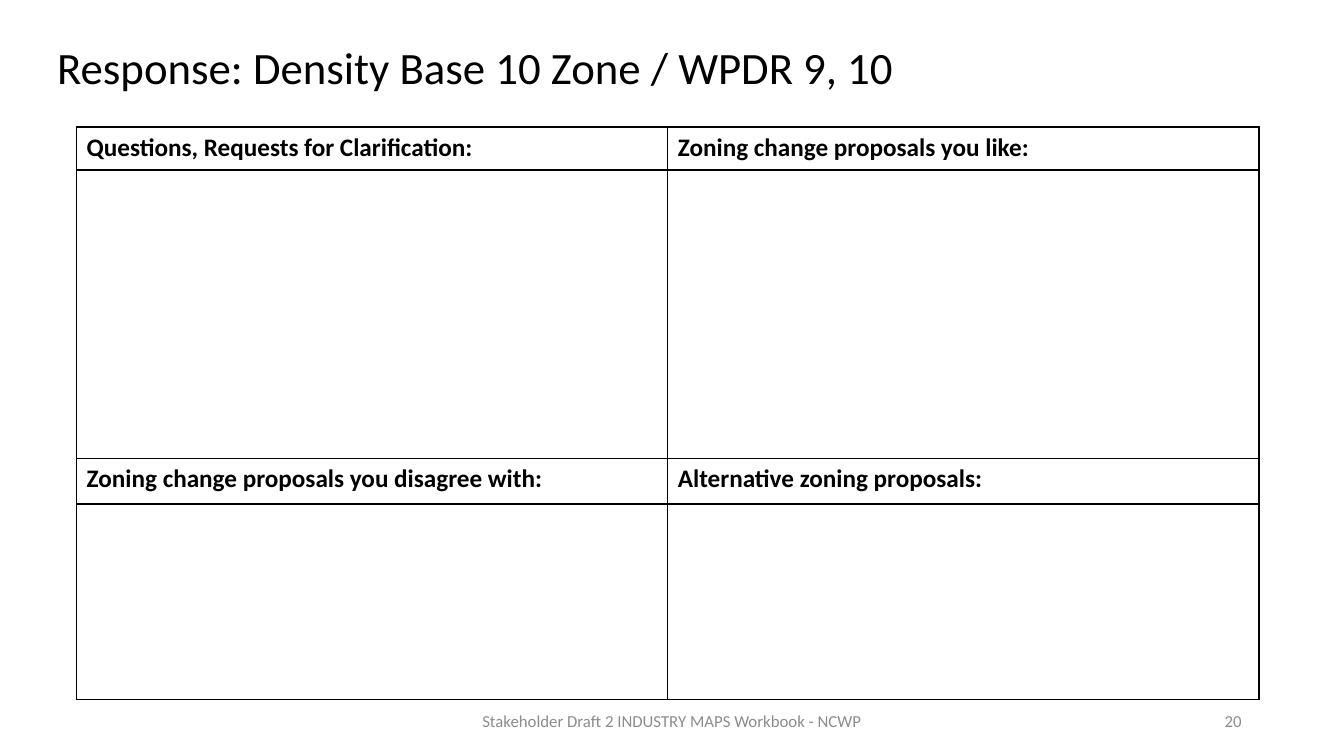
from dataclasses import dataclass

from lxml import etree
from pptx import Presentation
from pptx.dml.color import RGBColor
from pptx.enum.text import MSO_ANCHOR, PP_ALIGN
from pptx.oxml.ns import qn
from pptx.util import Pt

LEFT, CENTER, RIGHT = PP_ALIGN.LEFT, PP_ALIGN.CENTER, PP_ALIGN.RIGHT
MIDDLE = MSO_ANCHOR.MIDDLE
BLANK_LAYOUT = 6
EMU_PER_PX = 9525


@dataclass(frozen=True)
class Theme:
    font: str = "Calibri"
    ink: str = "000000"
    muted: str = "8C8C8C"
    title_size: int = 32
    heading_size: int = 18
    footer_size: int = 12
    border_width: int = 1


THEME = Theme()

COLUMN_WIDTHS = (563, 563)
ROWS = (
    (41, ("Questions, Requests for Clarification:", "Zoning change proposals you like:")),
    (275, ("", "")),
    (43, ("Zoning change proposals you disagree with:", "Alternative zoning proposals:")),
    (186, ("", "")),
)


def px(*lengths):
    return [n * EMU_PER_PX for n in lengths]


def add_run(p, text, size, color, bold=False):
    r = p.add_run()
    r.text = text
    r.font.name = THEME.font
    r.font.size = Pt(size)
    r.font.bold = bold
    r.font.color.rgb = RGBColor.from_string(color)


def add_text(s, box, text, size, color, align=LEFT):
    tf = s.shapes.add_textbox(*px(*box)).text_frame
    tf.word_wrap = True
    tf.vertical_anchor = MIDDLE
    p = tf.paragraphs[0]
    p.alignment = align
    add_run(p, text, size, color)
    return p


def set_borders(cell):
    tc_pr = cell._tc.get_or_add_tcPr()
    for side in ("a:lnL", "a:lnR", "a:lnT", "a:lnB"):
        ln = etree.SubElement(tc_pr, qn(side), w=str(Pt(THEME.border_width)))
        fill = etree.SubElement(ln, qn("a:solidFill"))
        etree.SubElement(fill, qn("a:srgbClr"), val=THEME.ink)


def add_response_table(s, left, top):
    width = sum(COLUMN_WIDTHS)
    height = sum(row_height for row_height, _ in ROWS)
    table = s.shapes.add_table(
        len(ROWS), len(COLUMN_WIDTHS), *px(left, top, width, height)).table
    table.first_row = table.horz_banding = False
    for column, column_width in zip(table.columns, COLUMN_WIDTHS):
        column.width = column_width * EMU_PER_PX
    for row, (row_height, headings) in zip(table.rows, ROWS):
        row.height = row_height * EMU_PER_PX
        for cell, heading in zip(row.cells, headings):
            set_borders(cell)
            cell.fill.background()
            if heading:
                add_run(cell.text_frame.paragraphs[0], heading,
                        THEME.heading_size, THEME.ink, bold=True)


def main():
    prs = Presentation()
    prs.slide_width, prs.slide_height = px(1280, 720)
    s = prs.slides.add_slide(prs.slide_layouts[BLANK_LAYOUT])

    title = add_text(s, (45, 38, 1147, 57), "Response: Density Base 10 Zone / WPDR 9, 10",
                     THEME.title_size, THEME.ink)
    title.line_spacing = 0.9
    add_text(s, (424, 667, 432, 38), "Stakeholder Draft 2 INDUSTRY MAPS Workbook - NCWP",
             THEME.footer_size, THEME.muted, CENTER)
    add_text(s, (904, 667, 288, 38), "20", THEME.footer_size, THEME.muted, RIGHT)
    add_response_table(s, 73, 121)

    prs.save("out.pptx")


if __name__ == "__main__":
    main()
